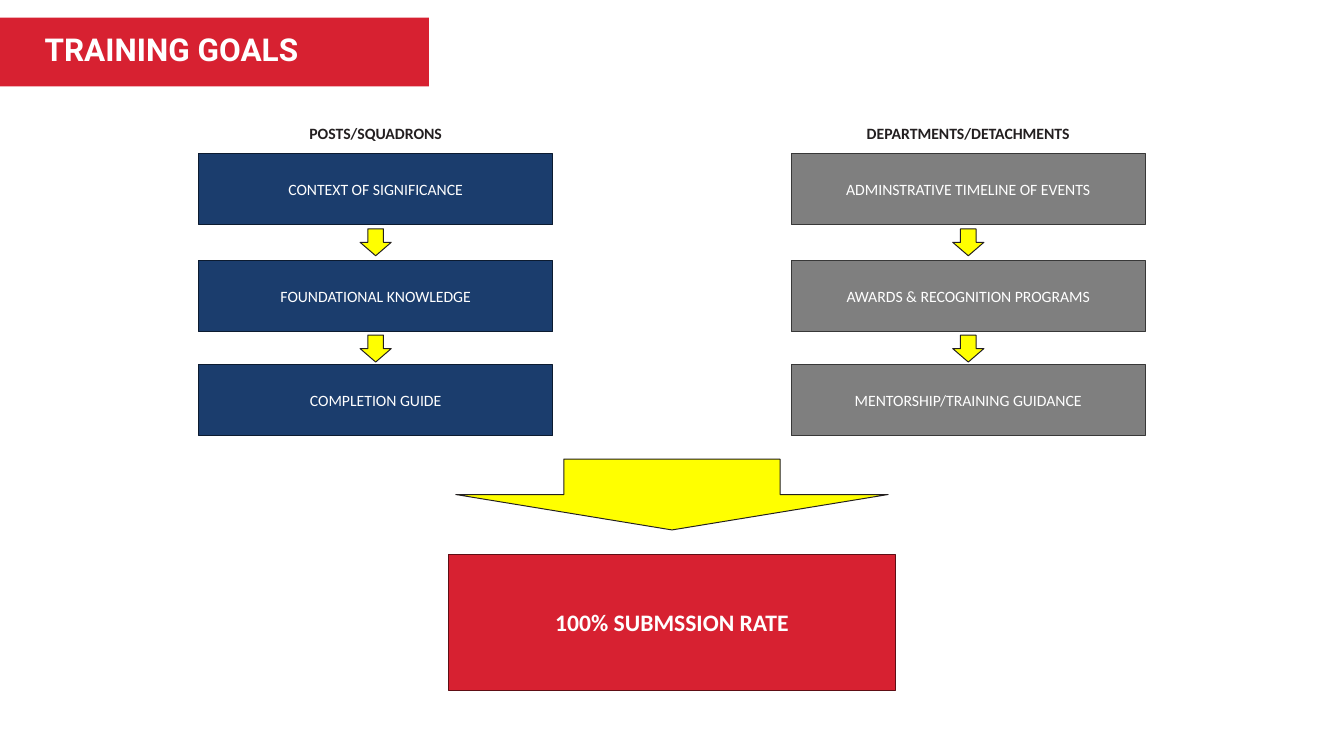
from pptx import Presentation
from pptx.dml.color import RGBColor
from pptx.enum.shapes import MSO_SHAPE
from pptx.enum.text import MSO_ANCHOR, MSO_AUTO_SIZE, PP_ALIGN
from pptx.util import Pt

RECTANGLE, DOWN_ARROW = MSO_SHAPE.RECTANGLE, MSO_SHAPE.DOWN_ARROW
LEFT, CENTER = PP_ALIGN.LEFT, PP_ALIGN.CENTER
TOP, MIDDLE = MSO_ANCHOR.TOP, MSO_ANCHOR.MIDDLE
NO_AUTOFIT = MSO_AUTO_SIZE.NONE

EMU_PER_PX = 9144  # 100 px to the inch
TITLE_ONLY = 5

COLORS = {
    "white": "FFFFFF",
    "ink": "231F20",
    "red": "D72131",
    "red_edge": "5E0E15",
    "navy": "1B3D6D",
    "navy_edge": "0C1B30",
    "gray": "7F7F7F",
    "gray_edge": "383838",
    "yellow": "FFFF00",
}

STEP_WIDTH, STEP_HEIGHT = 500, 100
STEP_TOPS = (217, 368, 515)
ARROW_WIDTH, ARROW_HEIGHT = 44, 38
ARROW_TOPS = (323, 473)
COLUMNS = (
    (280, "navy", "POSTS/SQUADRONS",
     ("CONTEXT OF SIGNIFICANCE", "FOUNDATIONAL KNOWLEDGE", "COMPLETION GUIDE")),
    (1116, "gray", "DEPARTMENTS/DETACHMENTS",
     ("ADMINSTRATIVE TIMELINE OF EVENTS", "AWARDS & RECOGNITION PROGRAMS",
      "MENTORSHIP/TRAINING GUIDANCE")),
)


def px(*lengths):
    return [length * EMU_PER_PX for length in lengths]


def color(name):
    return RGBColor.from_string(COLORS[name])


def write(shape, text, size=16, font="Calibri", ink="white", bold=False,
          align=CENTER, anchor=MIDDLE):
    frame = shape.text_frame
    frame.word_wrap = True
    frame.auto_size = NO_AUTOFIT
    frame.vertical_anchor = anchor
    para = frame.paragraphs[0]
    para.alignment = align
    span = para.add_run()
    span.text = text
    span.font.size = Pt(size)
    span.font.name = font
    span.font.bold = bold
    span.font.color.rgb = color(ink)


def add_block(slide, kind, bounds, fill, edge=None):
    """Add a flat filled shape, outlined only when an edge colour is given."""
    block = slide.shapes.add_shape(kind, *px(*bounds))
    block.shadow.inherit = False
    block.fill.solid()
    block.fill.fore_color.rgb = color(fill)
    if edge:
        block.line.color.rgb = color(edge)
        block.line.width = Pt(1)
    else:
        block.line.fill.background()
    return block


def add_arrow(slide, bounds):
    add_block(slide, DOWN_ARROW, bounds, "yellow", "ink")


def add_title(slide, text):
    title = slide.shapes.title
    title.left, title.top, title.width, title.height = px(53, 40, 455, 57)
    frame = title.text_frame
    frame.margin_top = frame.margin_bottom = 0
    write(title, text, size=32, font="Roboto", bold=True, align=LEFT)
    banner = add_block(slide, RECTANGLE, (0, 25, 605, 97), "red")
    title.element.addprevious(banner.element)


def add_column(slide, left, fill, heading, steps):
    label = slide.shapes.add_textbox(*px(left, 170, STEP_WIDTH, 37))
    write(label, heading, ink="ink", bold=True, anchor=TOP)
    for top, step in zip(STEP_TOPS, steps):
        box = add_block(slide, RECTANGLE, (left, top, STEP_WIDTH, STEP_HEIGHT),
                        fill, fill + "_edge")
        write(box, step)
    arrow_left = left + (STEP_WIDTH - ARROW_WIDTH) // 2
    for top in ARROW_TOPS:
        add_arrow(slide, (arrow_left, top, ARROW_WIDTH, ARROW_HEIGHT))


def main():
    deck = Presentation()
    deck.slide_width, deck.slide_height = px(1896, 1067)
    slide = deck.slides.add_slide(deck.slide_layouts[TITLE_ONLY])
    add_title(slide, "TRAINING GOALS")
    for column in COLUMNS:
        add_column(slide, *column)
    add_arrow(slide, (643, 648, 610, 100))
    goal = add_block(slide, RECTANGLE, (633, 782, 630, 192), "red", "red_edge")
    write(goal, "100% SUBMSSION RATE", size=24, bold=True)
    deck.save("out.pptx")


if __name__ == "__main__":
    main()
